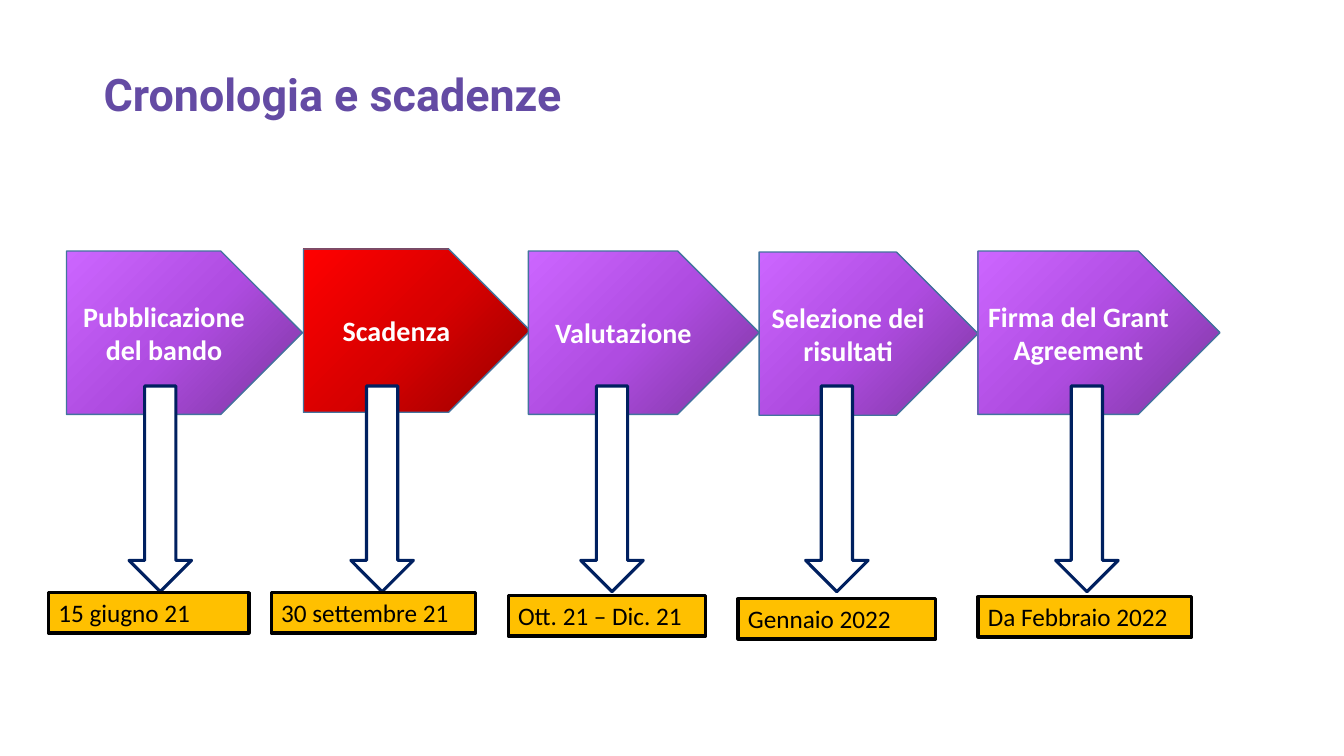
from copy import deepcopy
from pptx import Presentation
from pptx.dml.color import RGBColor
from pptx.enum.shapes import MSO_SHAPE
from pptx.enum.text import MSO_ANCHOR, MSO_AUTO_SIZE, PP_ALIGN
from pptx.oxml.ns import qn
from pptx.util import Inches, Pt

HUES = {
    "title": "644BA4", "white": "FFFFFF", "black": "000000",
    "edge": "43739E", "navy": "002060", "gold": "FFC000",
}
FADES = {
    "purple": ["7B369E", "AF4CE1", "CC66FF"],
    "red": ["970000", "D70000", "FF0000"],
}
FORMATS = {
    "title": {"name": "Roboto", "size": Pt(32), "bold": True},
    "step": {"name": "Calibri", "size": Pt(20), "bold": True},
    "date": {"name": "Calibri", "size": Pt(18), "bold": False},
}
STEPS = [
    ("Pubblicazione del bando", "purple", (0.66, 2.49, 2.34), 1.28,
     "15 giugno 21", (0.48, 5.88, 1.99)),
    ("Scadenza", "red", (3.01, 2.47, 2.25), 3.48,
     "30 settembre 21", (2.69, 5.88, 2.03)),
    ("Valutazione", "purple", (5.24, 2.49, 2.29), 5.76,
     "Ott. 21 – Dic. 21", (5.04, 5.91, 1.96)),
    ("Selezione dei risultati", "purple", (7.53, 2.5, 2.17), 7.99,
     "Gennaio 2022", (7.32, 5.94, 1.96)),
    ("Firma del Grant Agreement", "purple", (9.7, 2.49, 2.4), 10.47,
     "Da Febbraio 2022", (9.7, 5.92, 2.12)),
]


def paint(color, hue):
    color.rgb = RGBColor.from_string(hue)


def write(shape, text, style, hue, anchor, align=PP_ALIGN.LEFT):
    frame = shape.text_frame
    frame.word_wrap = True
    frame.vertical_anchor = anchor
    para = frame.paragraphs[0]
    para.alignment = align
    run = para.add_run()
    run.text = text
    for key, value in FORMATS[style].items():
        setattr(run.font, key, value)
    paint(run.font.color, HUES[hue])
    return frame


def outline(slide, kind, box, hue, width):
    shape = slide.shapes.add_shape(kind, *map(Inches, box))
    shape.shadow.inherit = False
    paint(shape.line.color, HUES[hue])
    shape.line.width = Pt(width)
    return shape


def fade(shape, hues):
    fill = shape.fill
    fill.gradient()
    fill.gradient_angle = 135
    stops = shape.element.spPr.find(".//" + qn("a:gsLst"))
    stops.insert(1, deepcopy(stops[0]))
    for stop, hue, place in zip(fill.gradient_stops, hues, (0, 0.5, 1)):
        stop.position = place
        paint(stop.color, hue)


def add_title(slide, box, text):
    shape = slide.shapes.add_textbox(*map(Inches, box))
    frame = write(shape, text, "title", "title", MSO_ANCHOR.BOTTOM)
    frame.paragraphs[0].line_spacing = 0.9


def add_step(slide, box, text, tone):
    shape = outline(slide, MSO_SHAPE.PENTAGON, box, "edge", 1)
    fade(shape, FADES[tone])
    write(shape, text, "step", "white", MSO_ANCHOR.MIDDLE, PP_ALIGN.CENTER)


def add_arrow(slide, box):
    shape = outline(slide, MSO_SHAPE.DOWN_ARROW, box, "navy", 2.25)
    shape.fill.solid()
    paint(shape.fill.fore_color, HUES["white"])


def add_date(slide, box, text):
    shape = outline(slide, MSO_SHAPE.RECTANGLE, box, "black", 2.25)
    shape.fill.solid()
    paint(shape.fill.fore_color, HUES["gold"])
    frame = write(shape, text, "date", "black", MSO_ANCHOR.TOP)
    frame.auto_size = MSO_AUTO_SIZE.SHAPE_TO_FIT_TEXT


def main():
    deck = Presentation()
    deck.slide_width, deck.slide_height = Inches(13.33), Inches(7.5)
    slide = deck.slides.add_slide(deck.slide_layouts[6])
    add_title(slide, (0.93, 0.6, 11.96, 0.65), "Cronologia e scadenze")
    for text, tone, spot, *_ in STEPS:
        add_step(slide, (*spot, 1.62), text, tone)
    for *_, left, date, spot in STEPS:
        add_arrow(slide, (left, 3.83, 0.62, 2.04))
        add_date(slide, (*spot, 0.4), date)
    deck.save("out.pptx")


if __name__ == "__main__":
    main()
